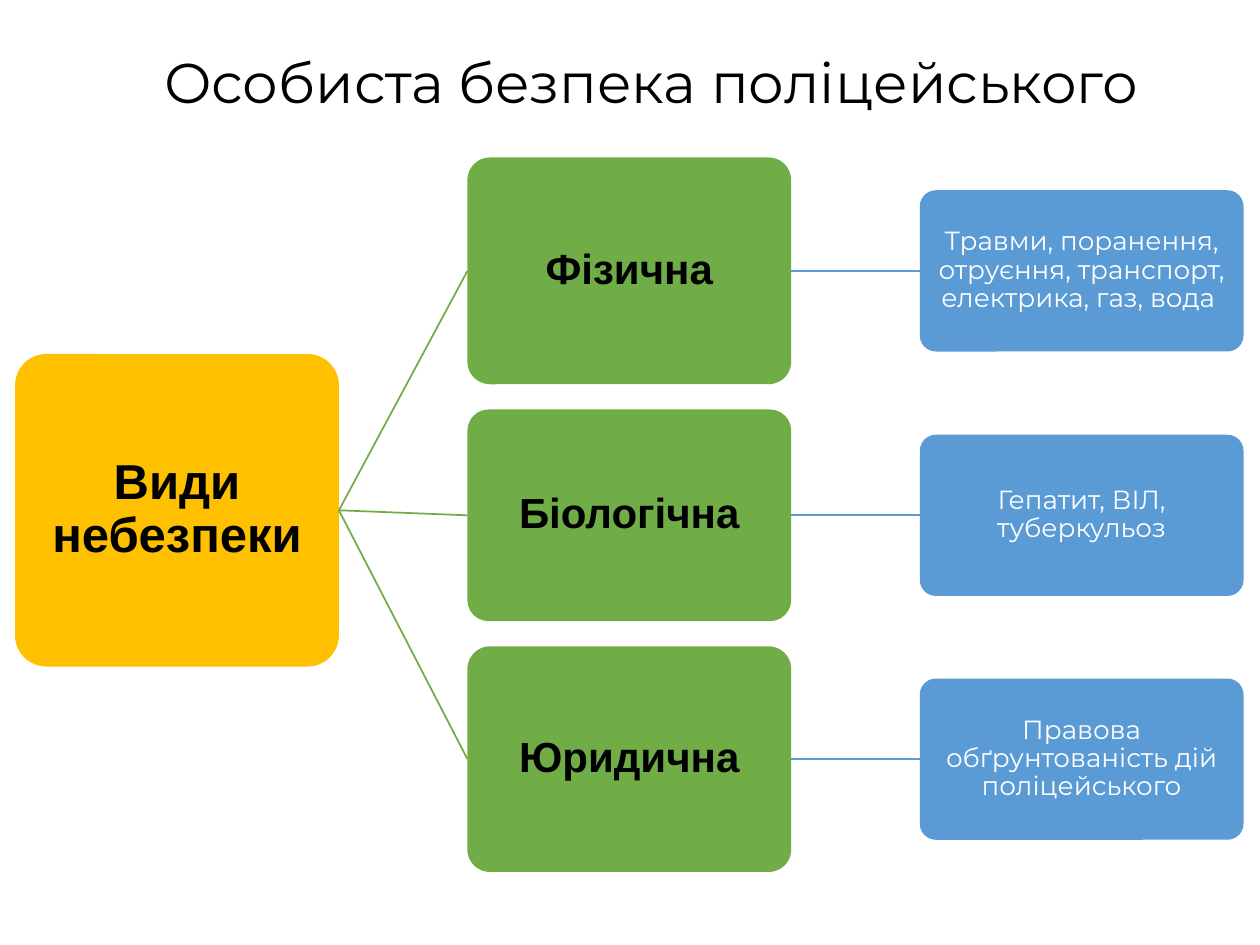
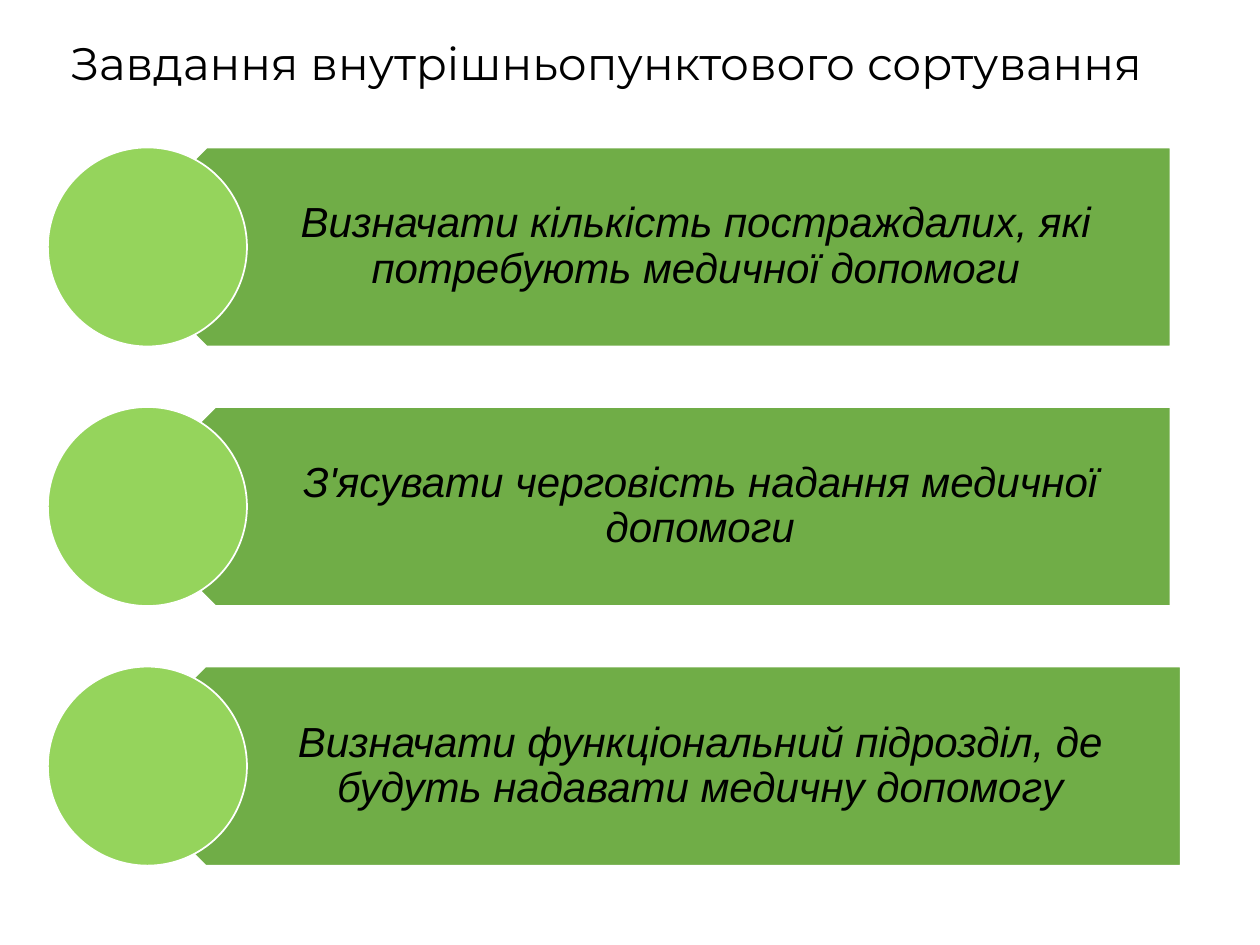
from lxml import etree
from pptx import Presentation
from pptx.dml.color import RGBColor
from pptx.enum.shapes import MSO_CONNECTOR as CONNECTOR, MSO_SHAPE as SHAPE
from pptx.enum.text import MSO_ANCHOR as ANCHOR, PP_ALIGN as ALIGN
from pptx.oxml.ns import qn
from pptx.util import Inches, Pt

BLACK, WHITE = "000000", "FFFFFF"
GOLD, GREEN, BLUE, LIME = "FFC000", "70AD47", "5B9BD5", "95D45C"
TITLE_FONT, BODY_FONT = "Montserrat", "Arial"

# Slide 1: a tree from the root through the kinds of danger to their examples
DANGER_TITLE = "Особиста безпека поліцейського"
ROOT = "Види небезпеки"
DANGERS = [  # kind, height of its box, examples
    ("Фізична", 1.8, "Травми, поранення, отруєння, транспорт, електрика, газ, вода "),
    ("Біологічна", 1.68, "Гепатит, ВІЛ, туберкульоз"),
    ("Юридична", 1.79, "Правова обґрунтованість дій поліцейського"),
]
ROOT_X, KIND_X, EXAMPLE_X = (0.12 + 3.59 * level for level in range(3))
NODE_WIDTH = 2.57
ROOT_TOP, ROOT_HEIGHT = 2.81, 2.48
KIND_TOP, KIND_GAP = 1.25, 0.2
EXAMPLE_HEIGHT = 1.28

# Slide 2: banners with a circle at the left end
SORTING_TITLE = "Завдання внутрішньопунктового сортування"
TASKS = [  # text, left and right edge of the banner
    ("Визначати кількість постраждалих, які потребують медичної допомоги", 0.85, 9.29),
    ("З'ясувати черговість надання медичної допомоги", 0.92, 9.29),
    ("Визначати функціональний підрозділ, де будуть надавати медичну допомогу",
     0.84, 9.37),
]
TASK_TOP, TASK_HEIGHT, TASK_PITCH = 1.17, 1.58, 2.06
CIRCLE_X = 0.38


def rgb(color):
    return RGBColor.from_string(color)


def write(shape, text, size, font=BODY_FONT, color=BLACK, bold=False, italic=False,
          align=ALIGN.CENTER, anchor=ANCHOR.MIDDLE, spacing=0.9,
          insets=(0.02, 0.02, 0.02, 0.02), wrap=True):
    frame = shape.text_frame
    frame.word_wrap = wrap
    frame.vertical_anchor = anchor
    (frame.margin_left, frame.margin_top,
     frame.margin_right, frame.margin_bottom) = map(Inches, insets)
    paragraph = frame.paragraphs[0]
    paragraph.alignment = align
    paragraph.line_spacing = spacing
    run = paragraph.add_run()
    run.text = text
    run.font.size = Pt(size)
    run.font.name = font
    run.font.bold = bold
    run.font.italic = italic
    run.font.color.rgb = rgb(color)


def add_box(slide, box):
    return slide.shapes.add_textbox(*map(Inches, box))


def add_title(slide, text, box, size, align):
    write(add_box(slide, box), text, size, font=TITLE_FONT, align=align,
          anchor=ANCHOR.TOP, spacing=1.0, insets=(0.1, 0.05, 0.1, 0.05), wrap=False)


def add_figure(slide, preset, box, fill, line=None):
    figure = slide.shapes.add_shape(preset, *map(Inches, box))
    figure.shadow.inherit = False
    figure.fill.solid()
    figure.fill.fore_color.rgb = rgb(fill)
    if line:
        figure.line.color.rgb = rgb(line)
        figure.line.width = Pt(1)
    else:
        figure.line.fill.background()
    return figure


def add_node(slide, text, left, top, height, fill, size, **style):
    node = add_figure(slide, SHAPE.ROUNDED_RECTANGLE,
                      (left, top, NODE_WIDTH, height), fill)
    node.adjustments[0] = 0.1
    write(node, text, size, **style)
    return node


def link(slide, parent, child, color):
    """Join the right side of parent to the left side of child."""
    branch = slide.shapes.add_connector(CONNECTOR.STRAIGHT, 0, 0, 0, 0)
    branch.begin_connect(parent, 3)
    branch.end_connect(child, 1)
    branch.line.color.rgb = rgb(color)
    branch.line.width = Pt(1)
    etree.SubElement(branch._element.spPr, qn("a:effectLst"))


def build_danger_slide(slide):
    add_title(slide, DANGER_TITLE, (0.82, 0.33, 8.7, 0.64), 32, ALIGN.CENTER)
    root = add_node(slide, ROOT, ROOT_X, ROOT_TOP, ROOT_HEIGHT, GOLD, 28, bold=True)
    top = KIND_TOP
    for kind, height, examples in DANGERS:
        kind_node = add_node(slide, kind, KIND_X, top, height, GREEN, 24, bold=True)
        example_top = top + (height - EXAMPLE_HEIGHT) / 2
        example_node = add_node(slide, examples, EXAMPLE_X, example_top,
                                EXAMPLE_HEIGHT, BLUE, 15, font=TITLE_FONT,
                                color=WHITE, insets=(0.01,) * 4)
        link(slide, root, kind_node, GREEN)
        link(slide, kind_node, example_node, BLUE)
        top += height + KIND_GAP


def build_sorting_slide(slide):
    add_title(slide, SORTING_TITLE, (0.46, 0.23, 9.37, 0.54), 26, ALIGN.LEFT)
    for row, (task, left, right) in enumerate(TASKS):
        top = TASK_TOP + row * TASK_PITCH
        banner = add_figure(slide, SHAPE.PENTAGON,
                            (left, top, right - left, TASK_HEIGHT), GREEN, WHITE)
        banner.rotation = 180
        text_left = left + TASK_HEIGHT / 4
        caption = add_box(slide, (text_left, top, right - text_left, TASK_HEIGHT))
        write(caption, task, 24, italic=True, insets=(0.7, 0.1, 0.19, 0.1))
        add_figure(slide, SHAPE.OVAL, (CIRCLE_X, top, TASK_HEIGHT, TASK_HEIGHT),
                   LIME, WHITE)


def main():
    deck = Presentation()
    deck.slide_width, deck.slide_height = Inches(10), Inches(7.5)
    blank = deck.slide_layouts[6]
    for build in (build_danger_slide, build_sorting_slide):
        build(deck.slides.add_slide(blank))
    deck.save("out.pptx")


if __name__ == "__main__":
    main()
